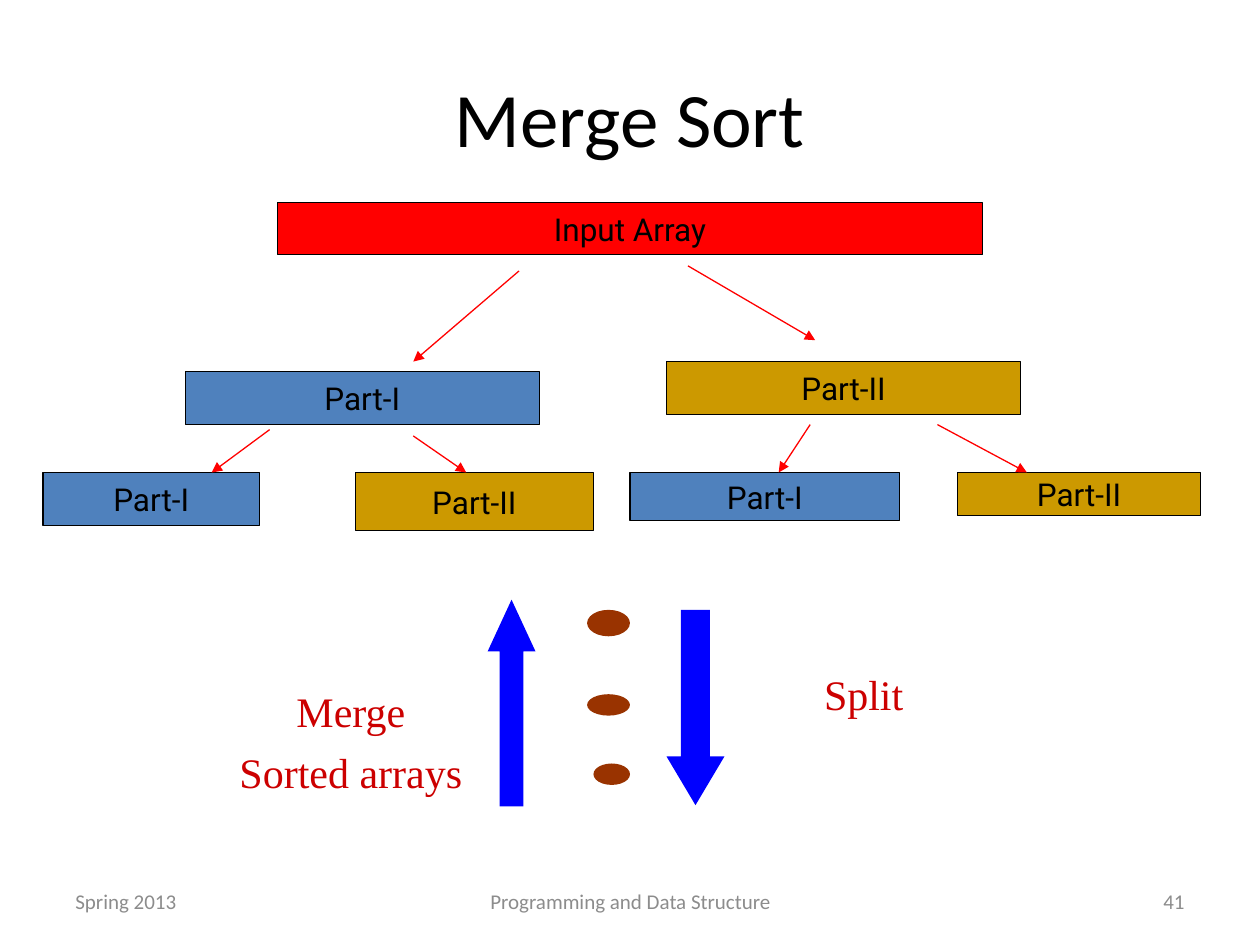
"""Build the merge sort slide: a tree of array parts with split and merge arrows."""
import pptx
import pptx.dml.color
import pptx.enum.shapes
import pptx.enum.text
import pptx.oxml.ns
import pptx.util
from lxml import etree

Inches = pptx.util.Inches
RGBColor = pptx.dml.color.RGBColor
SHAPES = pptx.enum.shapes.MSO_SHAPE
ALIGN = pptx.enum.text.PP_ALIGN
ANCHOR = pptx.enum.text.MSO_ANCHOR

BLACK = RGBColor(0x00, 0x00, 0x00)
GRAY = RGBColor(0x8C, 0x8C, 0x8C)
RED = RGBColor(0xFF, 0x00, 0x00)
STEEL = RGBColor(0x4F, 0x81, 0xBD)
GOLD = RGBColor(0xCC, 0x99, 0x00)
BROWN = RGBColor(0x99, 0x33, 0x00)
BLUE = RGBColor(0x00, 0x00, 0xFF)
CRIMSON = RGBColor(0xCC, 0x00, 0x00)

STYLES = {
    "title": {"name": "Calibri", "size": pptx.util.Pt(44), "color": BLACK},
    "footer": {"name": "Calibri", "size": pptx.util.Pt(12), "color": GRAY},
    "array": {"name": "Roboto", "size": pptx.util.Pt(18), "color": BLACK},
    "phase": {"name": "Times New Roman", "size": pptx.util.Pt(24), "color": CRIMSON},
}
TEXTS = [
    (["Merge Sort"], "title", ALIGN.CENTER, (0.5, 0.3, 9, 1.25)),
    (["Spring 2013"], "footer", ALIGN.LEFT, (0.5, 6.95, 2.33, 0.4)),
    (["Programming and Data Structure"], "footer", ALIGN.CENTER, (3.42, 6.95, 3.17, 0.4)),
    (["41"], "footer", ALIGN.RIGHT, (7.17, 6.95, 2.33, 0.4)),
    (["Split"], "phase", ALIGN.CENTER, (6.44, 5.26, 0.83, 0.5)),
    (["Merge", "Sorted arrays"], "phase", ALIGN.CENTER, (1.8, 5.39, 1.97, 0.98)),
]
ARRAYS = [
    ("Input Array", RED, (2.2, 1.61, 5.6, 0.41)),
    ("Part-I", STEEL, (1.47, 2.95, 2.81, 0.42)),
    ("Part-II", GOLD, (5.29, 2.87, 2.81, 0.42)),
    ("Part-I", STEEL, (0.34, 3.75, 1.72, 0.42)),
    ("Part-II", GOLD, (2.82, 3.75, 1.89, 0.46)),
    ("Part-I", STEEL, (5, 3.75, 2.14, 0.38)),
    ("Part-II", GOLD, (7.6, 3.75, 1.93, 0.34)),
]
BRANCHES = [
    (4.12, 2.15, 3.28, 2.87),
    (5.46, 2.11, 6.47, 2.7),
    (2.14, 3.41, 1.68, 3.75),
    (3.28, 3.46, 3.7, 3.75),
    (6.43, 3.37, 6.18, 3.75),
    (7.44, 3.37, 8.15, 3.75),
]
MARKS = [
    (SHAPES.OVAL, BROWN, (4.66, 4.84, 0.34, 0.21), ()),
    (SHAPES.OVAL, BROWN, (4.66, 5.51, 0.34, 0.17), ()),
    (SHAPES.OVAL, BROWN, (4.71, 6.06, 0.29, 0.17), ()),
    (SHAPES.DOWN_ARROW, BLUE, (5.29, 4.84, 0.46, 1.55), (0.5, 0.84)),
    (SHAPES.UP_ARROW, BLUE, (3.87, 4.76, 0.38, 1.64), (0.5, 1.08)),
]


def write(shape, lines, style, alignment, anchor=ANCHOR.MIDDLE, wrap=True, space=0):
    frame = shape.text_frame
    frame.word_wrap = wrap
    frame.vertical_anchor = anchor
    frame.text = "\n".join(lines)
    for paragraph in frame.paragraphs:
        paragraph.alignment = alignment
        paragraph.space_before = pptx.util.Pt(space)
        for key, value in STYLES[style].items():
            if key == "color":
                paragraph.font.color.rgb = value
            else:
                setattr(paragraph.font, key, value)


def add_shape(slide, kind, color, box, adjustments=()):
    shape = slide.shapes.add_shape(kind, *map(Inches, box))
    shape.shadow.inherit = False
    shape.fill.solid()
    shape.fill.fore_color.rgb = color
    shape.line.fill.background()
    for index, value in enumerate(adjustments):
        shape.adjustments[index] = value
    return shape


def add_array(slide, label, color, box):
    shape = add_shape(slide, SHAPES.RECTANGLE, color, box)
    shape.line.color.rgb = BLACK
    shape.line.width = pptx.util.Pt(0.75)
    write(shape, [label], "array", ALIGN.CENTER, wrap=False)


def add_branch(slide, ends):
    kind = pptx.enum.shapes.MSO_CONNECTOR.STRAIGHT
    connector = slide.shapes.add_connector(kind, *map(Inches, ends))
    connector.line.color.rgb = RED
    connector.line.width = pptx.util.Pt(0.75)
    qualify = pptx.oxml.ns.qn
    properties = connector.line._get_or_add_ln()
    etree.SubElement(properties, qualify("a:tailEnd"), type="triangle")
    etree.SubElement(properties.getparent(), qualify("a:effectLst"))


def main():
    presentation = pptx.Presentation()
    presentation.slide_width = Inches(10)
    presentation.slide_height = Inches(7.5)
    slide = presentation.slides.add_slide(presentation.slide_layouts[6])
    for lines, style, alignment, box in TEXTS:
        shape = slide.shapes.add_textbox(*map(Inches, box))
        phase = style == "phase"
        write(shape, lines, style, alignment,
              anchor=ANCHOR.TOP if phase else ANCHOR.MIDDLE,
              wrap=not phase, space=6 if phase else 0)
    for array in ARRAYS:
        add_array(slide, *array)
    for ends in BRANCHES:
        add_branch(slide, ends)
    for mark in MARKS:
        add_shape(slide, *mark)
    presentation.save("out.pptx")


if __name__ == "__main__":
    main()
